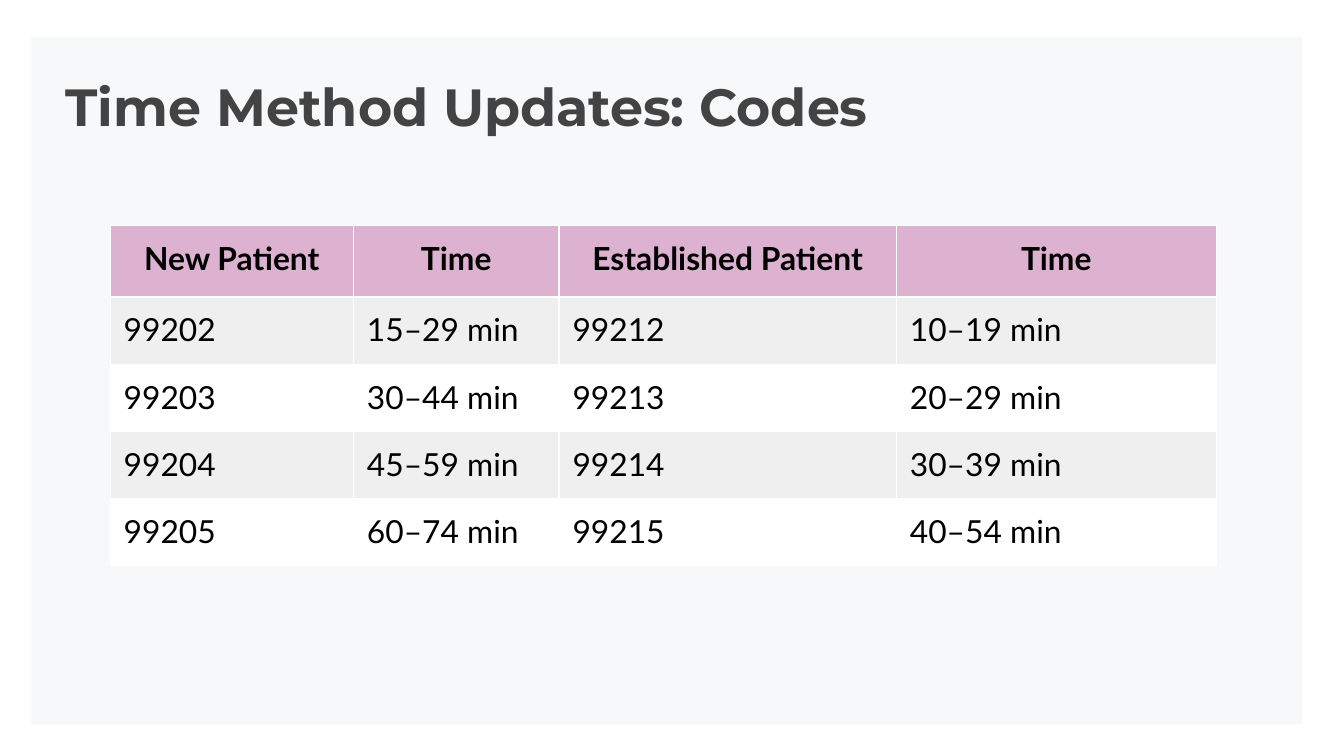
import pptx
import pptx.util
import pptx.dml.color
import pptx.enum.shapes
import pptx.enum.text
import pptx.oxml
import pptx.oxml.ns

Inches = pptx.util.Inches
RGB = pptx.dml.color.RGBColor
ALIGN = pptx.enum.text.PP_ALIGN

NAVY = RGB(0x07, 0x37, 0x63)
PINK = RGB(0xC8, 0x7D, 0xB1)
GRAY = RGB(0xEF, 0xEF, 0xEF)
WHITE = RGB(0xFF, 0xFF, 0xFF)
BLACK = RGB(0, 0, 0)
DARK = RGB(0x43, 0x43, 0x43)


def write(box, text, size=17, font="Lato", color=BLACK, bold=False, align=ALIGN.LEFT):
    box.margin_left = box.margin_right = Inches(0.1)
    box.margin_top = box.margin_bottom = Inches(0.1)
    box.word_wrap = True
    para = box.paragraphs[0]
    para.alignment = align
    run = para.add_run()
    run.text = text
    run.font.size = pptx.util.Pt(size)
    run.font.name = font
    run.font.bold = bold
    run.font.color.rgb = color


def paint(fill, node, color, alpha=100):
    fill.solid()
    fill.fore_color.rgb = color
    if alpha < 100:
        tint = node.find(".//" + pptx.oxml.ns.qn("a:srgbClr"))
        tint.append(pptx.oxml.parse_xml(
            f'<a:alpha {pptx.oxml.ns.nsdecls("a")} val="{alpha * 1000}"/>'))


# Widescreen slide, 16 to 9
deck = pptx.Presentation()
deck.slide_width = Inches(10)
deck.slide_height = Inches(10 * 9 / 16)
slide = deck.slides.add_slide(deck.slide_layouts[6])

# Pale panel
panel = slide.shapes.add_shape(
    pptx.enum.shapes.MSO_SHAPE.RECTANGLE,
    Inches(0.23), Inches(0.27), Inches(9.46), Inches(5.12))
panel.shadow.inherit = False
panel.line.fill.background()
paint(panel.fill, panel._element.spPr, NAVY, alpha=3)

# Title
title = slide.shapes.add_textbox(Inches(0.39), Inches(0.45), Inches(9.32), Inches(0.63))
write(title.text_frame, "Time Method Updates: Codes",
      size=28, font="Montserrat", color=DARK, bold=True)

# Table of codes and times
rows = [
    ("New Patient", "Time", "Established Patient", "Time"),
    ("99202", "15–29 min", "99212", "10–19 min"),
    ("99203", "30–44 min", "99213", "20–29 min"),
    ("99204", "45–59 min", "99214", "30–39 min"),
    ("99205", "60–74 min", "99215", "40–54 min"),
]
widths = [1.81, 1.53, 2.51, 2.38]
table = slide.shapes.add_table(
    len(rows), len(widths),
    Inches(0.82), Inches(1.68), Inches(8.24), Inches(2.53)).table
for col, width in zip(table.columns, widths):
    col.width = Inches(width)

for r, row in enumerate(rows):
    head = r == 0
    table.rows[r].height = Inches(0.53 if head else 0.5)
    for c, text in enumerate(row):
        cell = table.cell(r, c)
        write(cell.text_frame, text, bold=head, align=ALIGN.CENTER if head else ALIGN.LEFT)
        cell.margin_left = cell.margin_right = Inches(0.1)
        cell.margin_top = cell.margin_bottom = Inches(0.1)
        props = cell._tc.get_or_add_tcPr()
        if head:
            paint(cell.fill, props, PINK, alpha=57)
        else:
            paint(cell.fill, props, GRAY if r % 2 else WHITE)
        # White borders go ahead of the fill
        for i, side in enumerate("LRTB"):
            props.insert(i, pptx.oxml.parse_xml(
                f'<a:ln{side} {pptx.oxml.ns.nsdecls("a")} w="{pptx.util.Pt(0.75)}">'
                f'<a:solidFill><a:srgbClr val="{WHITE}"/></a:solidFill></a:ln{side}>'))

deck.save("out.pptx")
